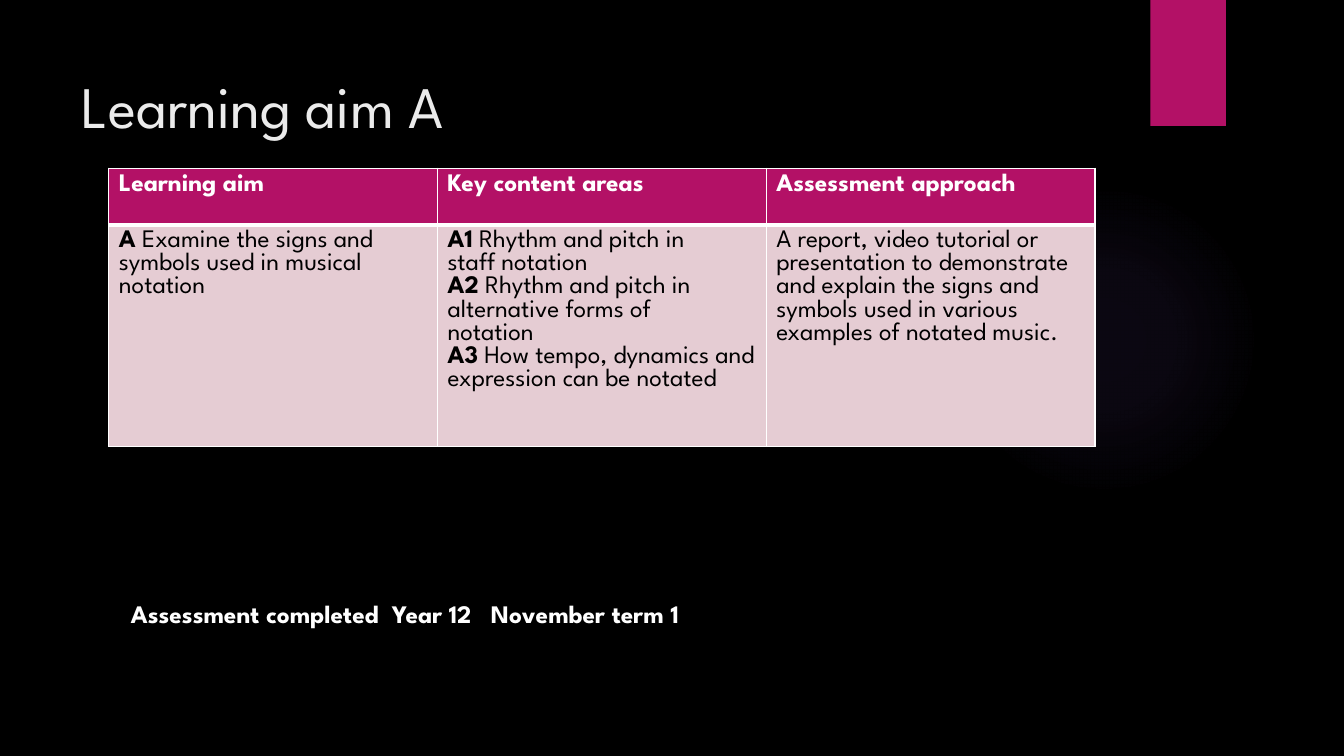
from dataclasses import dataclass

from pptx import Presentation
from pptx.dml.color import RGBColor as Rgb
from pptx.enum.shapes import MSO_SHAPE as Kind
from pptx.enum.text import MSO_ANCHOR as Anchor
from pptx.oxml import parse_xml as to_xml
from pptx.oxml.ns import nsdecls
from pptx.util import Inches, Pt

FONT = "League Spartan"
HUES = {
    "back": "000000", "pink": "B31166", "pale": "E5CCD3", "glow": "9B6BF2",
    "white": "FFFFFF", "title": "EBEBEB", "ink": "000000",
}


@dataclass
class Box:
    left: float
    top: float
    width: float
    height: float

    def place(self) -> tuple:
        return tuple(map(Inches, (self.left, self.top, self.width, self.height)))


@dataclass
class Cell:
    """Each line is a pair: a bold lead and the plain rest."""
    lines: list[tuple[str, str]]


HEADS = ["Learning aim", "Key content areas", "Assessment approach"]
BODY = [
    Cell([("A", " Examine the signs and"), ("", "symbols used in musical"),
          ("", "notation")]),
    Cell([("A1", " Rhythm and pitch in"), ("", "staff notation"),
          ("A2", " Rhythm and pitch in"), ("", "alternative forms of"),
          ("", "notation"),
          ("A3", " How tempo, dynamics and expression can be notated")]),
    Cell([("", "A report, video tutorial or"),
          ("", "presentation to demonstrate"),
          ("", "and explain the signs and"),
          ("", "symbols used in various"),
          ("", "examples of notated music.")]),
]


def color(name: str) -> Rgb:
    return Rgb.from_string(HUES[name])


def write(para, text: str, *, size: float = 18, hue: str = "white",
          bold: bool = False) -> None:
    run = para.add_run()
    run.text = text
    font = run.font
    font.name, font.size, font.bold = FONT, Pt(size), bold
    font.color.rgb = color(hue)


def add_box(slide, box: Box, anchor: Anchor, inset: float = 0.05):
    """Add a wrapped text box and return its first paragraph."""
    frame = slide.shapes.add_textbox(*box.place()).text_frame
    frame.word_wrap = True
    frame.vertical_anchor = anchor
    frame.margin_top = Inches(inset)
    return frame.paragraphs[0]


def add_shape(slide, kind: Kind, box: Box, hue: str):
    shape = slide.shapes.add_shape(kind, *box.place())
    shape.shadow.inherit = False
    shape.fill.solid()
    shape.fill.fore_color.rgb = color(hue)
    shape.line.fill.background()
    return shape


def add_glow(slide, box: Box) -> None:
    """Add a round glow that fades out towards its rim."""
    shape = add_shape(slide, Kind.OVAL, box, "glow")
    stops = "".join(
        f'<a:gs pos="{spot * 1000}"><a:srgbClr val="{HUES["glow"]}">'
        f'<a:alpha val="{alpha * 1000}"/></a:srgbClr></a:gs>'
        for spot, alpha in [(0, 7), (36, 6), (69, 0)])
    grad = to_xml(
        f'<a:gradFill {nsdecls("a")} rotWithShape="1"><a:gsLst>{stops}</a:gsLst>'
        '<a:path path="circle"><a:fillToRect l="50000" t="50000" r="50000" '
        'b="50000"/></a:path></a:gradFill>')
    props = shape.element.spPr
    props.replace(props.find("{*}solidFill"), grad)


def style(cell, hue: str, top: float = 1, base: float = 1) -> None:
    """Fill a cell and draw its white borders, with widths in points."""
    cell.fill.solid()
    cell.fill.fore_color.rgb = color(hue)
    props = cell._tc.get_or_add_tcPr()
    for spot, (side, width) in enumerate(zip("LRTB", (1, 1, top, base))):
        props.insert(spot, to_xml(
            f'<a:ln{side} {nsdecls("a")} w="{Pt(width)}"><a:solidFill>'
            f'<a:srgbClr val="{HUES["white"]}"/></a:solidFill></a:ln{side}>'))


def add_grid(slide, box: Box, heights: list[float]) -> None:
    table = slide.shapes.add_table(2, len(HEADS), *box.place()).table
    for row, height in zip(table.rows, heights):
        row.height = Inches(height)
    for col, (head, body) in enumerate(zip(HEADS, BODY)):
        table.columns[col].width = Inches(box.width / len(HEADS))
        top, cell = table.cell(0, col), table.cell(1, col)
        style(top, "pink", base=3)
        style(cell, "pale", top=3)
        write(top.text_frame.paragraphs[0], head, bold=True)
        frame = cell.text_frame
        for spot, (lead, rest) in enumerate(body.lines):
            para = frame.add_paragraph() if spot else frame.paragraphs[0]
            if lead:
                write(para, lead, hue="ink", bold=True)
            write(para, rest, hue="ink")


def add_note(slide, box: Box, parts: list[str], stops: list[float]) -> None:
    """Add a bold line whose parts start at tab stops."""
    para = add_box(slide, box, Anchor.MIDDLE)
    tabs = "".join(f'<a:tab pos="{Inches(stop)}" algn="l"/>' for stop in stops)
    para._p.get_or_add_pPr().append(
        to_xml(f'<a:tabLst {nsdecls("a")}>{tabs}</a:tabLst>'))
    write(para, "\t".join(parts), bold=True)


def main() -> None:
    deck = Presentation()
    deck.slide_width, deck.slide_height = Inches(13.33), Inches(7.5)
    slide = deck.slides.add_slide(deck.slide_layouts[6])
    back = slide.background.fill
    back.solid()
    back.fore_color.rgb = color("back")

    add_glow(slide, Box(9.41, 1.83, 3.08, 3.08))
    add_shape(slide, Kind.RECTANGLE, Box(11.41, 0, 0.75, 1.25), "pink")
    title = add_box(slide, Box(0.71, 0.5, 10.29, 1.53), Anchor.TOP, inset=0.19)
    write(title, "Learning aim A", size=42, hue="title")
    add_grid(slide, Box(1.08, 1.67, 9.78, 2.51), [0.56, 1.95])
    add_note(slide, Box(1.2, 5.89, 7.8, 0.4),
             ["Assessment completed", "Year 12", "November term 1"],
             [2.59, 3.57])
    deck.save("out.pptx")


if __name__ == "__main__":
    main()
